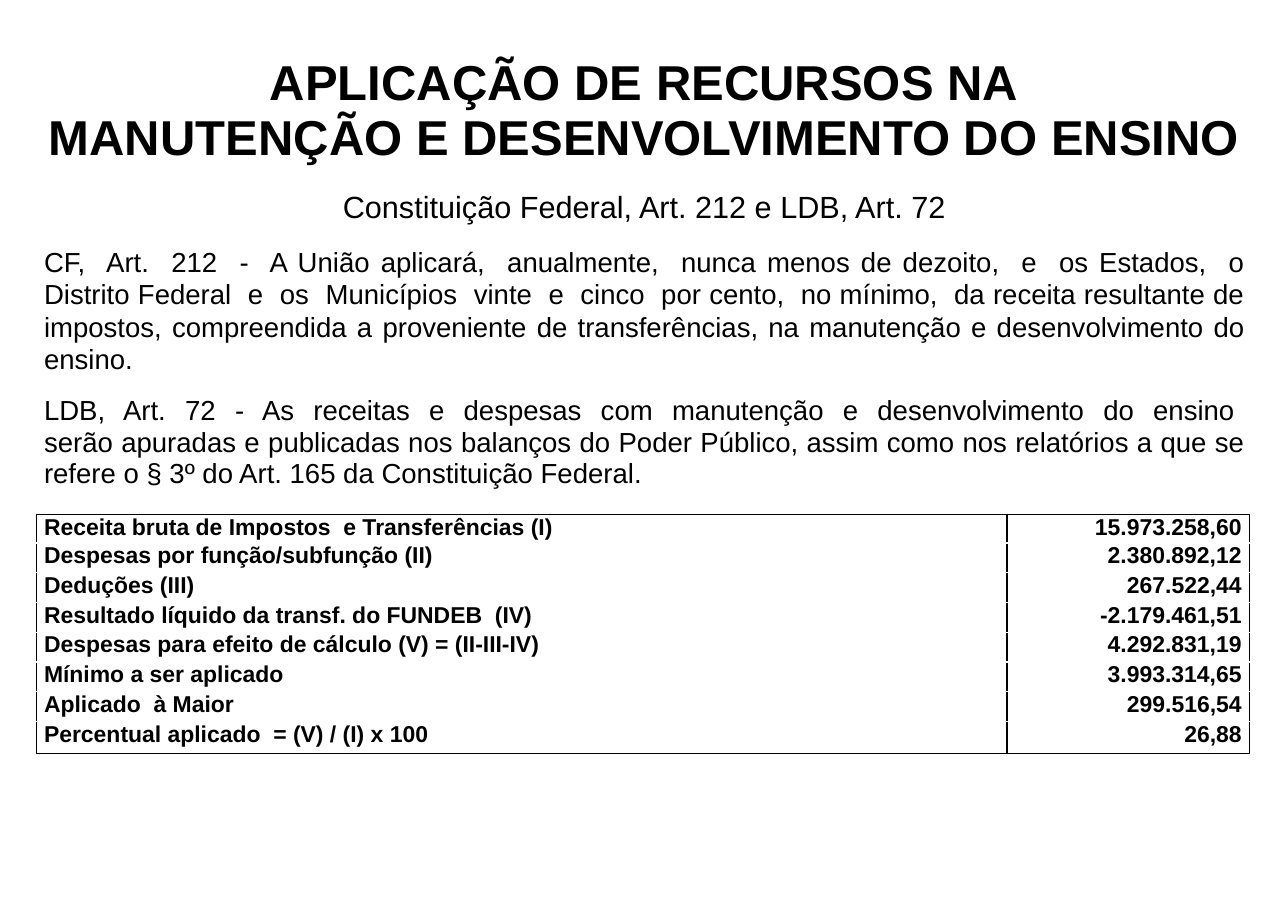
from dataclasses import dataclass

import pptx
import pptx.dml.color
import pptx.enum.text
import pptx.oxml
import pptx.oxml.ns
import pptx.util

Inches = pptx.util.Inches
Pt = pptx.util.Pt
Align = pptx.enum.text.PP_ALIGN

BLACK = pptx.dml.color.RGBColor(0, 0, 0)
FONT = "Arial"
EDGE = Pt(0.85)


@dataclass
class Para:
    text: str
    size: int
    align: Align
    bold: bool = False
    space: float | pptx.util.Length = 1.0
    before: float = 0


@dataclass
class Row:
    label: str
    value: str
    height: float = 0.27


TITLE = [
    Para("APLICAÇÃO DE RECURSOS NA\vMANUTENÇÃO E DESENVOLVIMENTO DO ENSINO",
         32, Align.CENTER, bold=True, space=Pt(36)),
]

BODY = [
    Para("Constituição Federal, Art. 212 e LDB, Art. 72", 20, Align.CENTER),
    Para("CF,  Art.  212  -  A União aplicará,  anualmente,  nunca menos de "
         "dezoito,  e  os Estados,  o Distrito Federal  e  os  Municípios  "
         "vinte  e  cinco  por cento,  no mínimo,  da receita resultante de "
         "impostos, compreendida a proveniente de transferências, na "
         "manutenção e desenvolvimento do ensino.",
         18, Align.JUSTIFY, space=Pt(21), before=13.8),
    Para("LDB,  Art.  72  -  As  receitas  e  despesas  com  manutenção  e  "
         "desenvolvimento  do  ensino  serão apuradas e publicadas nos "
         "balanços do Poder Público, assim como nos relatórios a que se "
         "refere o § 3º do Art. 165 da Constituição Federal.",
         18, Align.JUSTIFY, space=0.96, before=13.2),
]

ROWS = [
    Row("Receita bruta de Impostos  e Transferências (I)", "15.973.258,60", 0.26),
    Row("Despesas por função/subfunção (II)", "2.380.892,12"),
    Row("Deduções (III)", "267.522,44"),
    Row("Resultado líquido da transf. do FUNDEB  (IV)", "-2.179.461,51"),
    Row("Despesas para efeito de cálculo (V) = (II-III-IV)", "4.292.831,19"),
    Row("Mínimo a ser aplicado", "3.993.314,65"),
    Row("Aplicado  à Maior", "299.516,54"),
    Row("Percentual aplicado  = (V) / (I) x 100", "26,88", 0.29),
]
COLS = (8.81, 2.2)


def write(par, item: Para) -> None:
    par.text = item.text
    par.alignment = item.align
    par.line_spacing = item.space
    par.space_before = Pt(item.before)
    for run in par.runs:
        run.font.name = FONT
        run.font.size = Pt(item.size)
        run.font.bold = item.bold
        run.font.color.rgb = BLACK


def add_text(slide, top: float, height: float, items: list[Para]) -> None:
    box = slide.shapes.add_textbox(
        Inches(0.4), Inches(top), Inches(10.9), Inches(height))
    frame = box.text_frame
    frame.word_wrap = True
    frame.margin_left = frame.margin_right = 0
    frame.margin_top = frame.margin_bottom = 0
    for i, item in enumerate(items):
        write(frame.add_paragraph() if i else frame.paragraphs[0], item)


def rule(cell, sides: str) -> None:
    """Draw the cell's borders on the given sides, in the order L, R, T, B."""
    props = cell._tc.get_or_add_tcPr()
    for i, side in enumerate(sides):
        line = pptx.oxml.parse_xml(
            f'<a:ln{side} {pptx.oxml.ns.nsdecls("a")} w="{EDGE}">'
            f'<a:solidFill><a:srgbClr val="{BLACK}"/></a:solidFill></a:ln{side}>')
        props.insert(i, line)


def add_grid(slide) -> None:
    total = sum(row.height for row in ROWS)
    grid = slide.shapes.add_table(
        len(ROWS), len(COLS), Inches(0.33), Inches(4.67),
        Inches(sum(COLS)), Inches(total)).table
    grid.first_row = grid.horz_banding = False
    for col, width in zip(grid.columns, COLS):
        col.width = Inches(width)
    last = len(ROWS) - 1
    for r, row in enumerate(ROWS):
        grid.rows[r].height = Inches(row.height)
        sides = "LR" + ("T" if r == 0 else "") + ("B" if r == last else "")
        pairs = ((row.label, Align.LEFT), (row.value, Align.RIGHT))
        for c, (text, align) in enumerate(pairs):
            cell = grid.cell(r, c)
            cell.margin_left = cell.margin_right = Inches(0.07)
            cell.margin_top = cell.margin_bottom = 0
            cell.fill.background()
            rule(cell, sides)
            write(cell.text_frame.paragraphs[0], Para(text, 15, align, bold=True))


def main() -> None:
    deck = pptx.Presentation()
    deck.slide_width = Inches(11.69)
    deck.slide_height = Inches(8.27)
    slide = deck.slides.add_slide(deck.slide_layouts[6])
    add_text(slide, 0.5, 0.95, TITLE)
    add_text(slide, 1.71, 2.39, BODY)
    add_grid(slide)
    deck.save("out.pptx")


if __name__ == "__main__":
    main()
